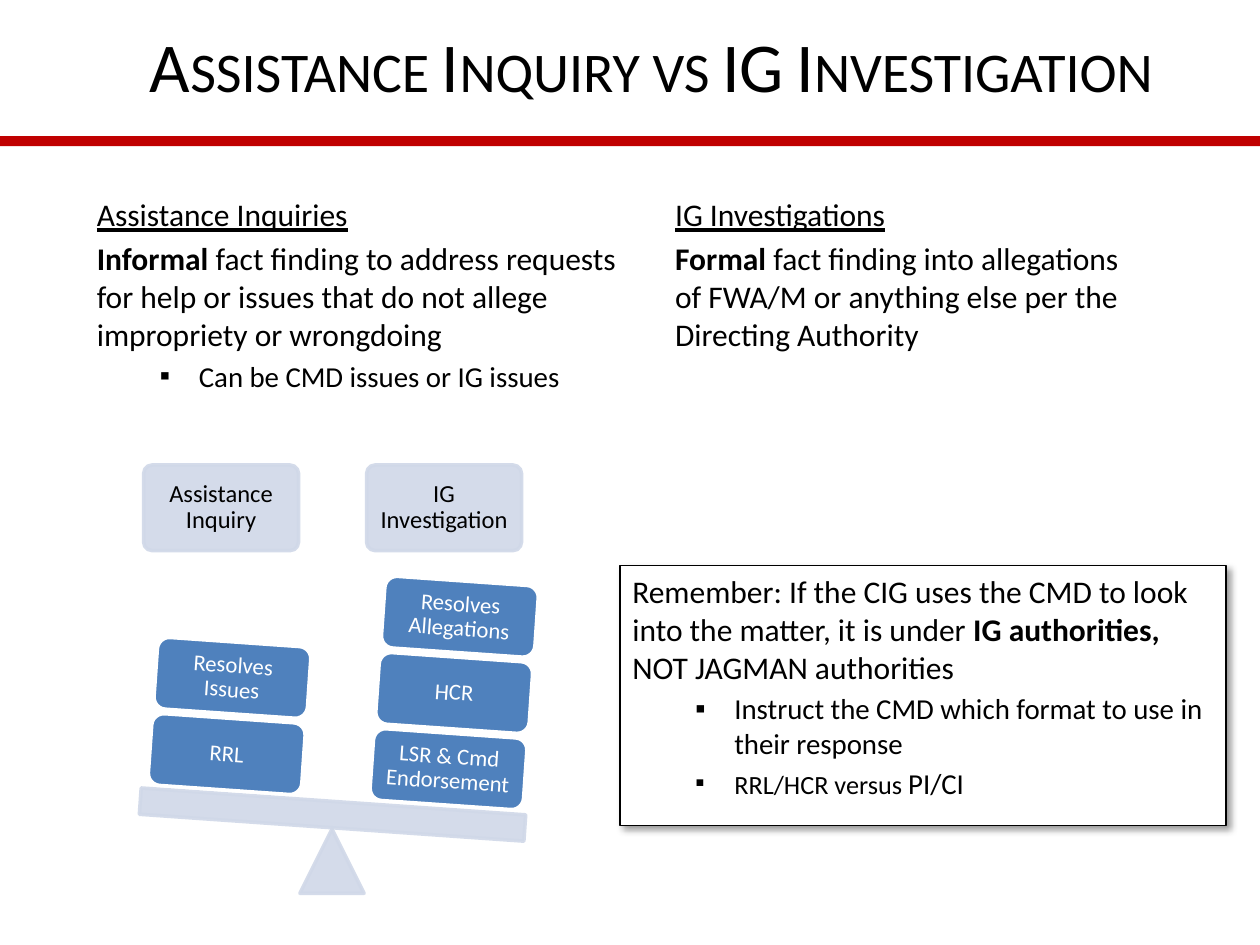
from lxml.etree import SubElement
from pptx import Presentation
from pptx.dml.color import RGBColor as Rgb
from pptx.enum.shapes import MSO_SHAPE as Shape
from pptx.enum.text import MSO_ANCHOR as Anchor, MSO_AUTO_SIZE as Fit, PP_ALIGN as Align
from pptx.oxml.ns import qn
from pptx.util import Inches, Pt

COLORS = {"bar": "C00000", "pale": "D0D8E8", "block": "4F81BD",
          "white": "FFFFFF", "black": "000000"}
CELL = 0.1  # the slide is a grid of 100 columns by 75 rows
TILT = 4


def color(name):
    return Rgb.from_string(COLORS[name])


def assign(target, values):
    for name, value in values.items():
        setattr(target, name, value)


def add_alpha(element, percent):
    for node in element.iter(qn("a:srgbClr")):
        SubElement(node, qn("a:alpha"), val=str(percent * 1000))


class SlideBuilder:
    font = "Calibri"

    def __init__(self, deck):
        self.page = deck.slides.add_slide(deck.slide_layouts[5])

    def grid(self, *cells):
        return [Inches(round(cell * CELL, 3)) for cell in cells]

    def title(self, text, place):
        box = self.page.shapes.title
        assign(box, dict(zip(("left", "top", "width", "height"), self.grid(*place))))
        assign(box.text_frame, {"vertical_anchor": Anchor.MIDDLE, "auto_size": Fit.NONE,
                                "word_wrap": True})
        para = box.text_frame.paragraphs[0]
        para.alignment = Align.CENTER
        self.span(para, text, 40)
        para.runs[0].font._element.set("cap", "small")

    def span(self, para, text, size, ink="black", **style):
        span = para.add_run()
        span.text = text
        assign(span.font, {"name": self.font, "size": Pt(size), **style})
        span.font.color.rgb = color(ink)

    def shape(self, kind, place, fill, line=None, weight=2, alpha=None, tilt=0):
        shape = self.page.shapes.add_shape(kind, *self.grid(*place))
        shape.shadow.inherit = False
        shape.rotation = tilt
        shape.fill.solid()
        shape.fill.fore_color.rgb = color(fill)
        if line:
            shape.line.color.rgb = color(line)
            shape.line.width = Pt(weight)
        else:
            shape.line.fill.background()
        if alpha:
            add_alpha(shape._element.spPr, alpha)
        return shape

    def pale(self, kind, place, tilt=0):
        return self.shape(kind, place, "pale", "pale", alpha=90, tilt=tilt)

    def label(self, shape, text, size, ink, inset):
        frame = shape.text_frame
        margins = {f"margin_{side}": Inches(inset)
                   for side in ("left", "top", "right", "bottom")}
        assign(frame, {"word_wrap": True, "vertical_anchor": Anchor.MIDDLE, **margins})
        para = frame.paragraphs[0]
        assign(para, {"alignment": Align.CENTER, "line_spacing": 0.9})
        self.span(para, text, size, ink)

    def text_box(self, place, paragraphs):
        box = self.page.shapes.add_textbox(*self.grid(*place))
        self.fill_text(box, paragraphs)

    def fill_text(self, box, paragraphs):
        """Each paragraph is (bulleted, [(text, size, style), ...])."""
        frame = box.text_frame
        assign(frame, {"word_wrap": True, "vertical_anchor": Anchor.TOP})
        for index, (bulleted, spans) in enumerate(paragraphs):
            para = frame.add_paragraph() if index else frame.paragraphs[0]
            para.alignment = Align.LEFT
            if bulleted:
                self.bullet(para)
            if index:
                para.space_before = Pt(round(spans[0][1] * 0.2, 1))
            for text, size, style in spans:
                self.span(para, text, size, **style)

    def bullet(self, para):
        props = para._p.get_or_add_pPr()
        props.set("marL", str(Inches(0.81)))
        props.set("indent", str(Inches(-0.31)))
        SubElement(props, qn("a:buFont"), typeface=self.font)
        SubElement(props, qn("a:buChar"), char="▪")

    def drop_shadow(self, shape):
        effects = shape._element.spPr.find(qn("a:effectLst"))
        shadow = SubElement(effects, qn("a:outerShdw"), blurRad=str(Pt(4)),
                            dist=str(Pt(3)), dir="2700000", algn="tl", rotWithShape="0")
        SubElement(shadow, qn("a:srgbClr"), val=COLORS["black"])
        add_alpha(shadow, 40)


def main():
    deck = Presentation()
    deck.slide_width, deck.slide_height = Inches(10), Inches(7.5)
    slide = SlideBuilder(deck)
    bold, underline = {"bold": True}, {"underline": True}

    # Title and red rule
    slide.shape(Shape.RECTANGLE, (0, 10.8, 100, 0.8), "bar")
    slide.title("Assistance Inquiry vs IG Investigation", (6.7, 0, 90, 10.2))

    # Two columns of definitions
    slide.text_box((6.7, 15, 43.5, 17), [
        (False, [("Assistance Inquiries", 18, underline)]),
        (False, [("Informal ", 18, bold),
                 ("fact finding to address requests for help or issues that do not "
                  "allege impropriety or wrongdoing", 18, {})]),
        (True, [("Can be CMD issues or IG issues", 16.5, {})]),
    ])
    slide.text_box((52.6, 15, 39.1, 14), [
        (False, [("IG Investigations", 18, underline)]),
        (False, [("Formal ", 18, bold),
                 ("fact finding into allegations of FWA/M or anything else per the "
                  "Directing Authority", 18, {})]),
    ])

    # Balance: headings, fulcrum and plank
    for left, text in ((11.4, "Assistance Inquiry"), (29.1, "IG Investigation")):
        heading = slide.pale(Shape.ROUNDED_RECTANGLE, (left, 36.9, 12.3, 6.8))
        heading.adjustments[0] = 0.1
        slide.label(heading, text, 14, "black", 0.08)
    slide.pale(Shape.ISOSCELES_TRIANGLE, (23.8, 65.8, 5.1, 5.1))
    slide.pale(Shape.RECTANGLE, (11.1, 63.6, 30.6, 2.1), TILT)

    # Tilted blocks, stacked upwards from the plank
    stacks = [(11.9, 57, ["RRL", "Resolves Issues"]),
              (29.5, 58.2, ["LSR & Cmd Endorsement", "HCR", "Resolves Allegations"])]
    for left, top, texts in stacks:
        for level, text in enumerate(texts):
            place = (left + 0.45 * level, top - 6.05 * level, 12.2, 5.7)
            block = slide.shape(Shape.ROUNDED_RECTANGLE, place, "block", "white", tilt=TILT)
            slide.label(block, text, 13, "white", 0.07)

    # Reminder note
    note = slide.shape(Shape.RECTANGLE, (49.2, 44.9, 48.1, 20.6), "white", "black", 0.75)
    slide.drop_shadow(note)
    slide.fill_text(note, [
        (False, [("Remember: If the CIG uses the CMD to look into the matter, it is under ",
                  18, {}),
                 ("IG authorities, ", 18, bold), ("NOT JAGMAN authorities", 18, {})]),
        (True, [("Instruct the CMD which format to use in their response", 16.5, {})]),
        (True, [("RRL/HCR versus ", 15, {}), ("PI/CI", 16.5, {})]),
    ])

    deck.save("out.pptx")


if __name__ == "__main__":
    main()
